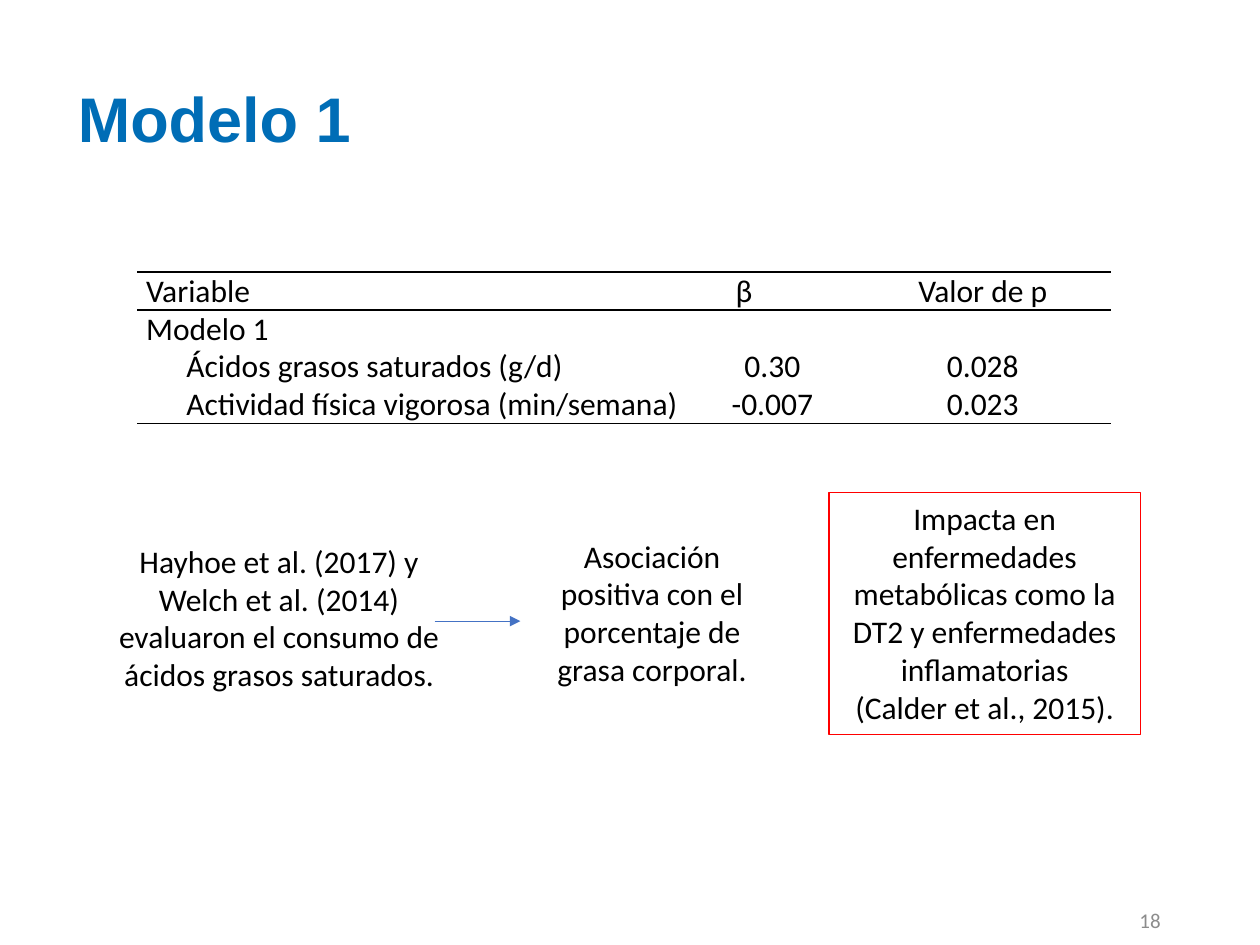
from lxml.etree import SubElement
from pptx import Presentation
from pptx.dml.color import RGBColor
from pptx.enum.shapes import MSO_CONNECTOR
from pptx.enum.text import MSO_ANCHOR, PP_ALIGN
from pptx.oxml.ns import qn
from pptx.util import Inches, Pt

BLACK = RGBColor(0x00, 0x00, 0x00)
TITLE_BLUE = RGBColor(0x00, 0x6D, 0xB6)
ARROW_BLUE = RGBColor(0x44, 0x72, 0xC4)
RED = RGBColor(0xFF, 0x00, 0x00)
GRAY = RGBColor(0x8C, 0x8C, 0x8C)
BODY = {"name": "Calibri", "size": Pt(18), "bold": False}


def write(text_frame, lines, font_format, color, alignment):
    """Fill a text frame with one paragraph per line."""
    text_frame.text = "\n".join(lines)
    for paragraph in text_frame.paragraphs:
        paragraph.alignment = alignment
        for name, value in font_format.items():
            setattr(paragraph.font, name, value)
        paragraph.font.color.rgb = color


def add_border(cell, side, visible):
    """Draw one cell border, or switch it off."""
    border = SubElement(cell._tc.get_or_add_tcPr(), qn(f"a:{side}"), w=str(Pt(1)))
    if visible:
        fill = SubElement(border, qn("a:solidFill"))
        SubElement(fill, qn("a:srgbClr"), val=str(BLACK))
    else:
        SubElement(border, qn("a:noFill"))


presentation = Presentation()
presentation.slide_width = Inches(10)
presentation.slide_height = Inches(7.5)
slide = presentation.slides.add_slide(presentation.slide_layouts[6])

# Title, statements and slide number
texts = [
    ((0.52, 0.67, 8.53, 0.52), ["Modelo 1"],
     {"name": "Arial", "size": Pt(36), "bold": True},
     TITLE_BLUE, PP_ALIGN.LEFT, MSO_ANCHOR.MIDDLE, None),
    ((0.79, 4.25, 2.85, 1.35),
     ["Hayhoe et al. (2017) y Welch et al. (2014) evaluaron el consumo de "
      "ácidos grasos saturados."],
     BODY, BLACK, PP_ALIGN.CENTER, MSO_ANCHOR.TOP, None),
    ((4.13, 4.21, 2.09, 1.31),
     ["Asociación positiva con el porcentaje de grasa corporal."],
     BODY, BLACK, PP_ALIGN.CENTER, MSO_ANCHOR.TOP, None),
    ((6.58, 3.91, 2.47, 1.92),
     ["Impacta en enfermedades metabólicas como la DT2 y enfermedades "
      "inflamatorias", "(Calder et al., 2015)."],
     BODY, BLACK, PP_ALIGN.CENTER, MSO_ANCHOR.TOP, RED),
    ((7.06, 7.1, 2.25, 0.4), ["18"], {"name": "Calibri", "size": Pt(12)},
     GRAY, PP_ALIGN.RIGHT, MSO_ANCHOR.MIDDLE, None),
]
for position, lines, font_format, color, alignment, anchor, outline in texts:
    shape = slide.shapes.add_textbox(*map(Inches, position))
    shape.text_frame.word_wrap = True
    shape.text_frame.vertical_anchor = anchor
    write(shape.text_frame, lines, font_format, color, alignment)
    if outline:
        shape.line.color.rgb = outline
        shape.line.width = Pt(0.75)

# Arrow from the studies to their finding
arrow = slide.shapes.add_connector(
    MSO_CONNECTOR.STRAIGHT, Inches(3.45), Inches(4.93), Inches(4.13), Inches(4.93))
arrow.line.color.rgb = ARROW_BLUE
arrow.line.width = Pt(0.5)
SubElement(arrow.line._get_or_add_ln(), qn("a:tailEnd"), type="triangle")
SubElement(arrow._element.spPr, qn("a:effectLst"))

# Regression table
rows = [
    ["Variable", "β", "", "Valor de p"],
    ["Modelo 1", "", "", ""],
    ["Ácidos grasos saturados (g/d)", "", "0.30", "0.028"],
    ["Actividad física vigorosa (min/semana)", "", "-0.007", "0.023"],
]
column_widths = [3.94, 0.45, 1.3, 2.04]
row_height = 0.3
merges = [(0, 1, 2), (1, 0, 3), (2, 0, 1), (3, 0, 1)]  # row, first and last column
ruled_above = {0, 1}
last_row = len(rows) - 1

table = slide.shapes.add_table(
    len(rows), len(column_widths), Inches(1.09), Inches(2.16),
    Inches(sum(column_widths)), Inches(row_height * len(rows))).table
table.first_row = False
table.horz_banding = False
for column, width in zip(table.columns, column_widths):
    column.width = Inches(width)

for row_index, values in enumerate(rows):
    for column_index, value in enumerate(values):
        cell = table.cell(row_index, column_index)
        cell.margin_left = cell.margin_right = Inches(0.07)
        cell.margin_top = cell.margin_bottom = 0
        alignment = PP_ALIGN.CENTER if column_index else PP_ALIGN.LEFT
        write(cell.text_frame, [value], BODY, BLACK, alignment)
        # Predictors are indented under the model name
        if row_index > 1 and column_index == 0:
            cell.text_frame.paragraphs[0]._p.get_or_add_pPr().set(
                "marL", str(Inches(0.32)))
        borders = {
            "lnL": False,
            "lnR": False,
            "lnT": row_index in ruled_above,
            "lnB": row_index + 1 in ruled_above or row_index == last_row,
        }
        for side, visible in borders.items():
            add_border(cell, side, visible)
        cell.fill.background()

for row_index, first, last in merges:
    table.cell(row_index, first).merge(table.cell(row_index, last))

presentation.save("out.pptx")
